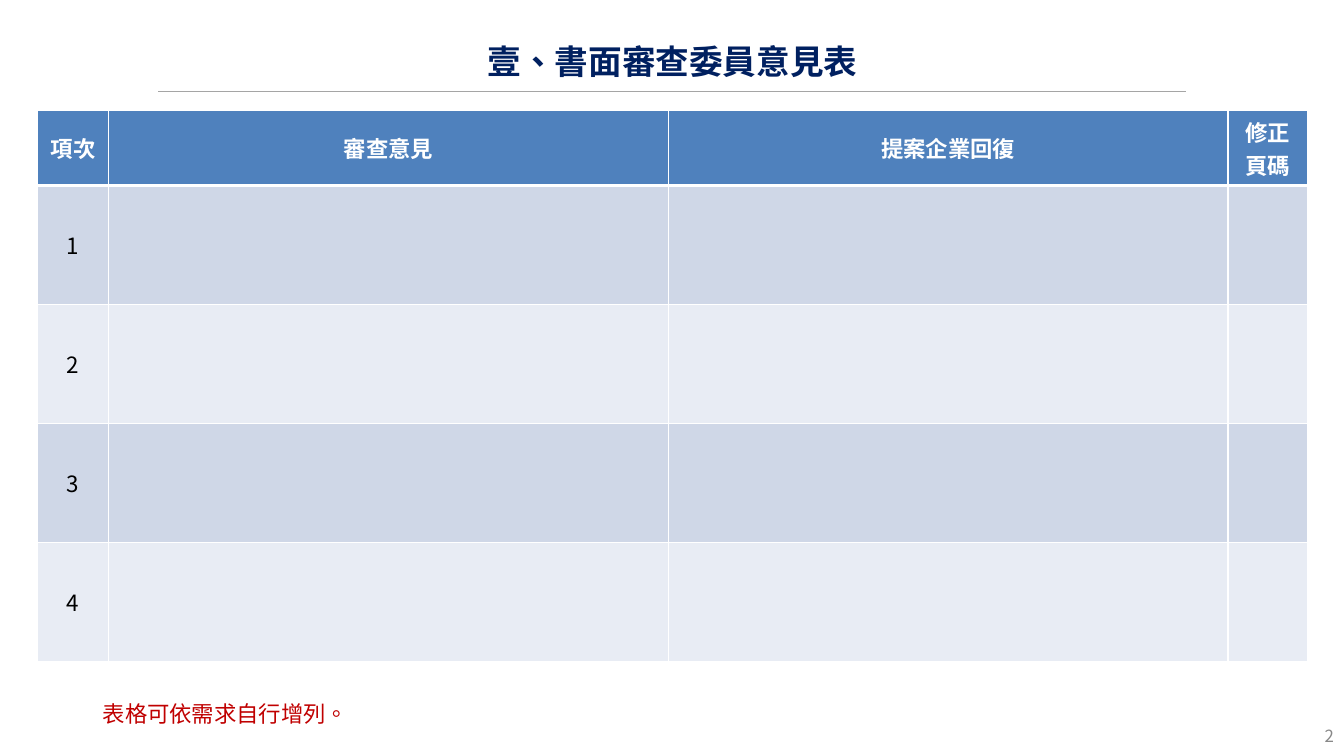
"""Build the reviewer comment form slide with its title, response table and note."""
from lxml import etree
from pptx import Presentation
from pptx.dml.color import RGBColor
from pptx.enum.shapes import MSO_CONNECTOR
from pptx.enum.text import MSO_ANCHOR, PP_ALIGN
from pptx.oxml.ns import qn
from pptx.util import Inches, Pt

LEFT, CENTER, RIGHT = PP_ALIGN.LEFT, PP_ALIGN.CENTER, PP_ALIGN.RIGHT
TOP, MIDDLE = MSO_ANCHOR.TOP, MSO_ANCHOR.MIDDLE
STRAIGHT = MSO_CONNECTOR.STRAIGHT
FONT, LANGUAGE = "Noto Sans CJK TC", "zh-TW"

TITLE = "壹、書面審查委員意見表"
HEADINGS = ["項次", "審查意見", "提案企業回復", "修正頁碼"]
ITEMS = ["1", "2", "3", "4"]
NOTE = "表格可依需求自行增列。"
PAGE = "2"

WIDTH, HEIGHT = 13.33, 7.5
COLUMNS = [0.71, 5.55, 5.55, 0.79]
HEADING_ROW, ITEM_ROW = 0.74, 1.18
HEADING_FILL, BANDS = "4F81BD", ["CFD7E7", "E8ECF4"]
TITLE_BOX = (2.26, 0.31, 8.82, 0.59)
NOTE_BOX = (0.92, 6.86, 8.81, 0.35)
PAGE_BOX = (WIDTH - 0.67, HEIGHT - 0.4, 0.67, 0.4)


def color(hex_string):
    return RGBColor.from_string(hex_string)


def write(frame, text, size=16, ink="000000", bold=False, align=CENTER, spacing=None):
    paragraph = frame.paragraphs[0]
    paragraph.alignment = align
    if spacing:
        paragraph.line_spacing = spacing
    run = paragraph.add_run()
    run.text = text
    font = run.font
    font.size, font.bold, font.name = Pt(size), bold, FONT
    font.color.rgb = color(ink)
    properties = run._r.get_or_add_rPr()
    properties.set("lang", LANGUAGE)
    etree.SubElement(properties, qn("a:ea"), typeface=FONT)


def add_text(slide, box, text, anchor=TOP, **style):
    frame = slide.shapes.add_textbox(*map(Inches, box)).text_frame
    frame.word_wrap = True
    frame.vertical_anchor = anchor
    write(frame, text, **style)


def format_cell(cell, fill, top, bottom):
    properties = cell._tc.get_or_add_tcPr()
    for side, points in (("L", 1), ("R", 1), ("T", top), ("B", bottom)):
        border = etree.SubElement(properties, qn(f"a:ln{side}"), w=str(Pt(points)))
        solid = etree.SubElement(border, qn("a:solidFill"))
        etree.SubElement(solid, qn("a:srgbClr"), val="FFFFFF")
    cell.fill.solid()
    cell.fill.fore_color.rgb = color(fill)
    cell.vertical_anchor = MIDDLE


def add_review_table(slide):
    heights = [HEADING_ROW] + [ITEM_ROW] * len(ITEMS)
    table = slide.shapes.add_table(
        len(heights), len(COLUMNS), Inches(0.37), Inches(1.1),
        Inches(sum(COLUMNS)), Inches(sum(heights))).table
    for column, width in zip(table.columns, COLUMNS):
        column.width = Inches(width)
    for index, (row, height) in enumerate(zip(table.rows, heights)):
        row.height = Inches(height)
        fill = BANDS[(index - 1) % 2] if index else HEADING_FILL
        for cell in row.cells:
            format_cell(cell, fill, 3 if index == 1 else 1, 1 if index else 3)
    for column, heading in enumerate(HEADINGS):
        write(table.cell(0, column).text_frame, heading, ink="FFFFFF", bold=True)
    for row, item in enumerate(ITEMS, 1):
        write(table.cell(row, 0).text_frame, item)


def main():
    deck = Presentation()
    deck.slide_width, deck.slide_height = Inches(WIDTH), Inches(HEIGHT)
    slide = deck.slides.add_slide(deck.slide_layouts[5])

    rule = slide.shapes.add_connector(
        STRAIGHT, Inches(1.57), Inches(0.91), Inches(11.76), Inches(0.91))
    rule.line.color.rgb = color("A5A5A5")
    rule.line.width = Pt(0.75)
    etree.SubElement(rule._element.spPr, qn("a:effectLst"))

    title = slide.shapes.title
    title.left, title.top, title.width, title.height = map(Inches, TITLE_BOX)
    title.text_frame.vertical_anchor = MIDDLE
    write(title.text_frame, TITLE, size=24, ink="002060", bold=True)

    add_text(slide, PAGE_BOX, PAGE, anchor=MIDDLE, size=12, ink="888888", align=RIGHT)
    add_review_table(slide)
    add_text(slide, NOTE_BOX, NOTE, ink="C00000", align=LEFT, spacing=1.12)
    deck.save("out.pptx")


if __name__ == "__main__":
    main()
